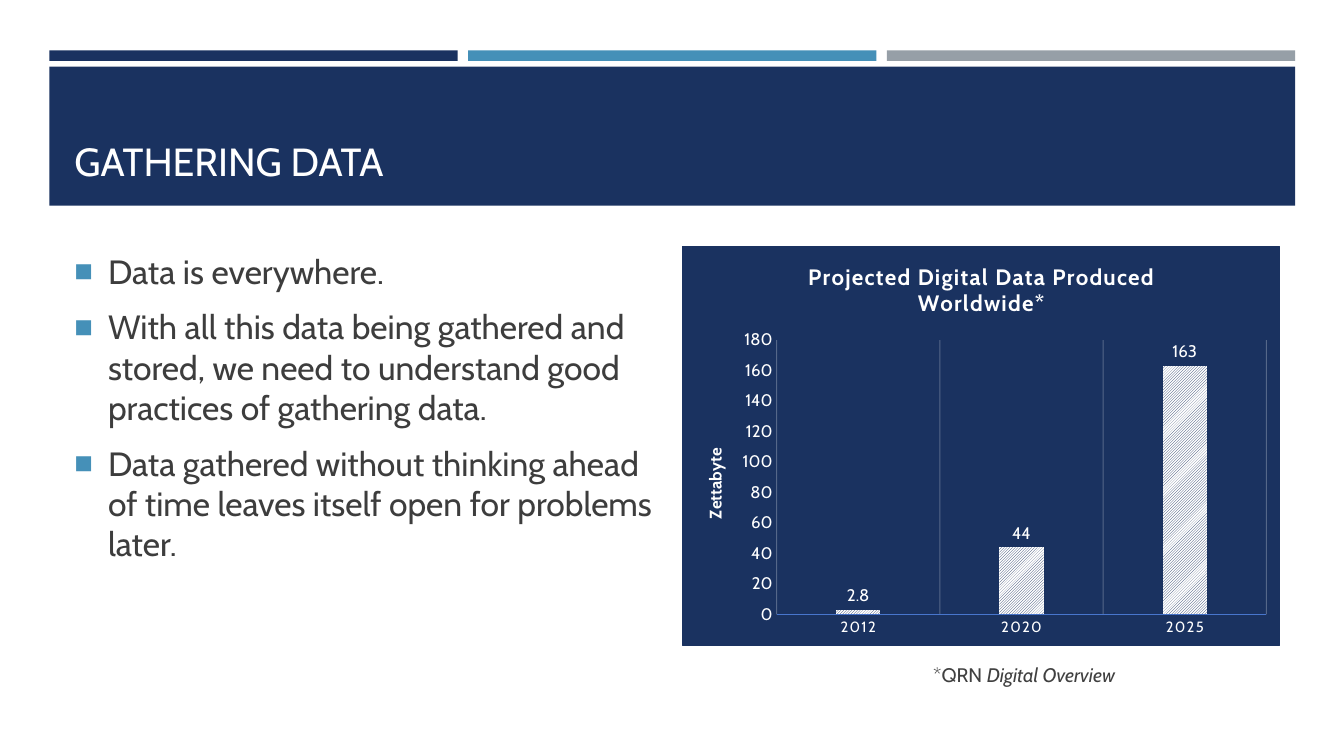
"""Build the "Gathering Data" slide with bullet points and a column chart."""
from dataclasses import dataclass

from lxml.etree import SubElement
from pptx import Presentation
from pptx.chart.chart import Chart
from pptx.chart.data import CategoryChartData
from pptx.dml.color import RGBColor
from pptx.dml.fill import FillFormat
from pptx.enum.chart import XL_CHART_TYPE, XL_LABEL_POSITION, XL_TICK_MARK
from pptx.enum.dml import MSO_PATTERN
from pptx.enum.shapes import MSO_SHAPE
from pptx.enum.text import MSO_ANCHOR
from pptx.oxml import parse_xml
from pptx.oxml.ns import nsdecls, qn
from pptx.slide import Slide
from pptx.text.text import Font, TextFrame, _Paragraph
from pptx.util import Pt


@dataclass(frozen=True)
class Theme:
    font: str = "Cabin"
    navy: str = "1A3260"
    blue: str = "4590B8"
    gray: str = "969FA7"
    white: str = "FFFFFF"
    body_text: str = "3D3D3D"
    note_text: str = "404040"
    axis_line: str = "4876CD"
    title_size: float = 28
    body_size: float = 24
    chart_title_size: float = 16
    note_size: float = 14
    label_size: float = 12
    category_size: float = 10.6


@dataclass(frozen=True)
class Box:
    left: float
    top: float
    width: float
    height: float

    def lengths(self) -> tuple[Pt, Pt, Pt, Pt]:
        return Pt(self.left), Pt(self.top), Pt(self.width), Pt(self.height)


@dataclass(frozen=True)
class Band:
    box: Box
    color: str


THEME = Theme()
BAND_LEFT, BAND_WIDTH, BAND_STEP = 35.3, 291.6, 299.1
BANDS = [
    Band(Box(BAND_LEFT + index * BAND_STEP, 36, BAND_WIDTH, 7.6), color)
    for index, color in enumerate((THEME.navy, THEME.blue, THEME.gray))
] + [Band(Box(BAND_LEFT, 47.6, 889.8, 99.3), THEME.navy)]
TITLE_BOX = Box(46.1, 57.6, 868.3, 77.8)
BODY_BOX = Box(46.1, 175.7, 427, 285.8)
CHART_BOX = Box(487.4, 175.7, 427, 285.8)
NOTE_BOX = Box(659.5, 470.2, 151.2, 24.5)
BULLETS = (
    "Data is everywhere.",
    "With all this data being gathered and stored, we need to understand "
    "good practices of gathering data.",
    "Data gathered without thinking ahead of time leaves itself open for "
    "problems later.",
)


def format_font(font: Font, *, size: float, color: str,
                bold: bool = False, italic: bool = False) -> None:
    """Apply the theme typeface and the given format."""
    font.name, font.size = THEME.font, Pt(size)
    font.bold, font.italic = bold, italic
    font.color.rgb = RGBColor.from_string(color)


def add_text(paragraph: _Paragraph, text: str, **font_format) -> None:
    """Append a formatted run to a paragraph."""
    run = paragraph.add_run()
    run.text = text
    format_font(run.font, **font_format)


def fill_solid(fill: FillFormat, color: str) -> None:
    """Give a fill one solid colour."""
    fill.solid()
    fill.fore_color.rgb = RGBColor.from_string(color)


def add_band(slide: Slide, band: Band) -> None:
    """Draw a filled rectangle without outline."""
    shape = slide.shapes.add_shape(MSO_SHAPE.RECTANGLE, *band.box.lengths())
    shape.shadow.inherit = False
    fill_solid(shape.fill, band.color)
    shape.line.fill.background()


def add_text_frame(slide: Slide, box: Box, *, wrap: bool = True,
                   anchor: MSO_ANCHOR = MSO_ANCHOR.TOP) -> TextFrame:
    """Add a text box and return its text frame."""
    text_frame = slide.shapes.add_textbox(*box.lengths()).text_frame
    text_frame.word_wrap = wrap
    text_frame.vertical_anchor = anchor
    return text_frame


def add_bullets(text_frame: TextFrame, texts: tuple[str, ...]) -> None:
    """Write one square-bulleted paragraph for each text."""
    for index, text in enumerate(texts):
        paragraph = text_frame.add_paragraph() if index else text_frame.paragraphs[0]
        paragraph.space_before, paragraph.space_after = Pt(4.8), Pt(6)
        add_text(paragraph, text, size=THEME.body_size, color=THEME.body_text)
        properties = paragraph._p.get_or_add_pPr()
        properties.set("marL", str(Pt(24)))
        properties.set("indent", str(Pt(-24)))
        bullet_color = SubElement(properties, qn("a:buClr"))
        SubElement(bullet_color, qn("a:srgbClr"), val=THEME.blue)
        SubElement(properties, qn("a:buSzPct"), val="92000")
        SubElement(properties, qn("a:buFont"), typeface="Arial")
        SubElement(properties, qn("a:buChar"), char="■")


def style_axes(chart: Chart) -> None:
    """Format both axes, the gridlines and the value axis title."""
    category_axis, value_axis = chart.category_axis, chart.value_axis
    for axis, size in ((category_axis, THEME.category_size), (value_axis, THEME.label_size)):
        axis.major_tick_mark = axis.minor_tick_mark = XL_TICK_MARK.NONE
        format_font(axis.tick_labels.font, size=size, color=THEME.white)
    category_axis.format.line.width = Pt(0.25)
    category_axis.format.line.color.rgb = RGBColor.from_string(THEME.axis_line)
    category_axis.has_major_gridlines = True
    grid_line = category_axis.major_gridlines.format.line
    grid_line.width = Pt(0.75)
    grid_line.color.rgb = RGBColor.from_string(THEME.white)
    value_axis.has_major_gridlines = False
    value_axis.format.line.fill.background()
    value_axis.minimum_scale, value_axis.maximum_scale = 0, 180
    value_axis.major_unit = 20
    add_text(value_axis.axis_title.text_frame.paragraphs[0], "Zettabyte",
             size=THEME.label_size, color=THEME.white, bold=True)


def style_chart_xml(chart: Chart) -> None:
    """Set the chart background, plot layout, grid transparency and letter spacing."""
    chart_space = chart.element
    chart_space.find(qn("c:chart")).addnext(parse_xml(
        f'<c:spPr {nsdecls("c", "a")}>'
        f'<a:solidFill><a:srgbClr val="{THEME.navy}"/></a:solidFill>'
        f'<a:ln w="{Pt(0.75)}"><a:solidFill><a:srgbClr val="{THEME.navy}"/>'
        '</a:solidFill></a:ln></c:spPr>'))
    for color in chart_space.xpath(".//c:catAx/c:majorGridlines//a:srgbClr"):
        SubElement(color, qn("a:alpha"), val="25000")
    for properties in chart_space.xpath(
            "./c:chart/c:title//a:rPr | .//c:catAx/c:txPr//a:defRPr"):
        properties.set("spc", "100")
    plot_area = chart_space.xpath(".//c:plotArea")[0]
    for layout in plot_area.findall(qn("c:layout")):
        plot_area.remove(layout)
    layout = parse_xml(f'<c:layout {nsdecls("c")}><c:manualLayout/></c:layout>')
    settings = {"layoutTarget": "inner", "xMode": "edge", "yMode": "edge",
                "x": "0.157", "y": "0.235", "w": "0.821", "h": "0.687"}
    for name, setting in settings.items():
        SubElement(layout[0], qn(f"c:{name}"), val=setting)
    plot_area.insert(0, layout)


def add_data_chart(slide: Slide, box: Box) -> None:
    """Draw the column chart of projected data."""
    data = CategoryChartData()
    data.categories = ("2012", "2020", "2025")
    data.add_series("Series 1", (2.8, 44, 163))
    chart = slide.shapes.add_chart(
        XL_CHART_TYPE.COLUMN_CLUSTERED, *box.lengths(), data).chart
    format_font(chart.font, size=THEME.label_size, color=THEME.white)
    chart.has_legend = False
    title = chart.chart_title.text_frame
    title_format = dict(size=THEME.chart_title_size, color=THEME.white, bold=True)
    add_text(title.paragraphs[0], "Projected Digital Data Produced", **title_format)
    add_text(title.add_paragraph(), "Worldwide*", **title_format)
    plot = chart.plots[0]
    plot.vary_by_categories = False
    plot.gap_width, plot.overlap = 269, -20
    series = plot.series[0]
    fill = series.format.fill
    fill.patterned()
    fill.pattern = MSO_PATTERN.LIGHT_UPWARD_DIAGONAL
    fill.fore_color.rgb = RGBColor.from_string(THEME.navy)
    fill.back_color.rgb = RGBColor.from_string(THEME.white)
    labels = series.data_labels
    labels.show_value = True
    labels.position = XL_LABEL_POSITION.OUTSIDE_END
    format_font(labels.font, size=THEME.label_size, color=THEME.white)
    style_axes(chart)
    style_chart_xml(chart)


def main() -> None:
    """Build and save the presentation."""
    presentation = Presentation()
    presentation.slide_width, presentation.slide_height = Pt(960), Pt(540)
    slide = presentation.slides.add_slide(presentation.slide_layouts[6])
    for band in BANDS:
        add_band(slide, band)
    title = add_text_frame(slide, TITLE_BOX, anchor=MSO_ANCHOR.BOTTOM)
    add_text(title.paragraphs[0], "GATHERING DATA", size=THEME.title_size, color=THEME.white)
    add_bullets(add_text_frame(slide, BODY_BOX), BULLETS)
    add_data_chart(slide, CHART_BOX)
    note = add_text_frame(slide, NOTE_BOX, wrap=False).paragraphs[0]
    for text, italic in (("*QRN ", False), ("Digital Overview", True)):
        add_text(note, text, size=THEME.note_size, color=THEME.note_text, italic=italic)
    presentation.save("out.pptx")


if __name__ == "__main__":
    main()
